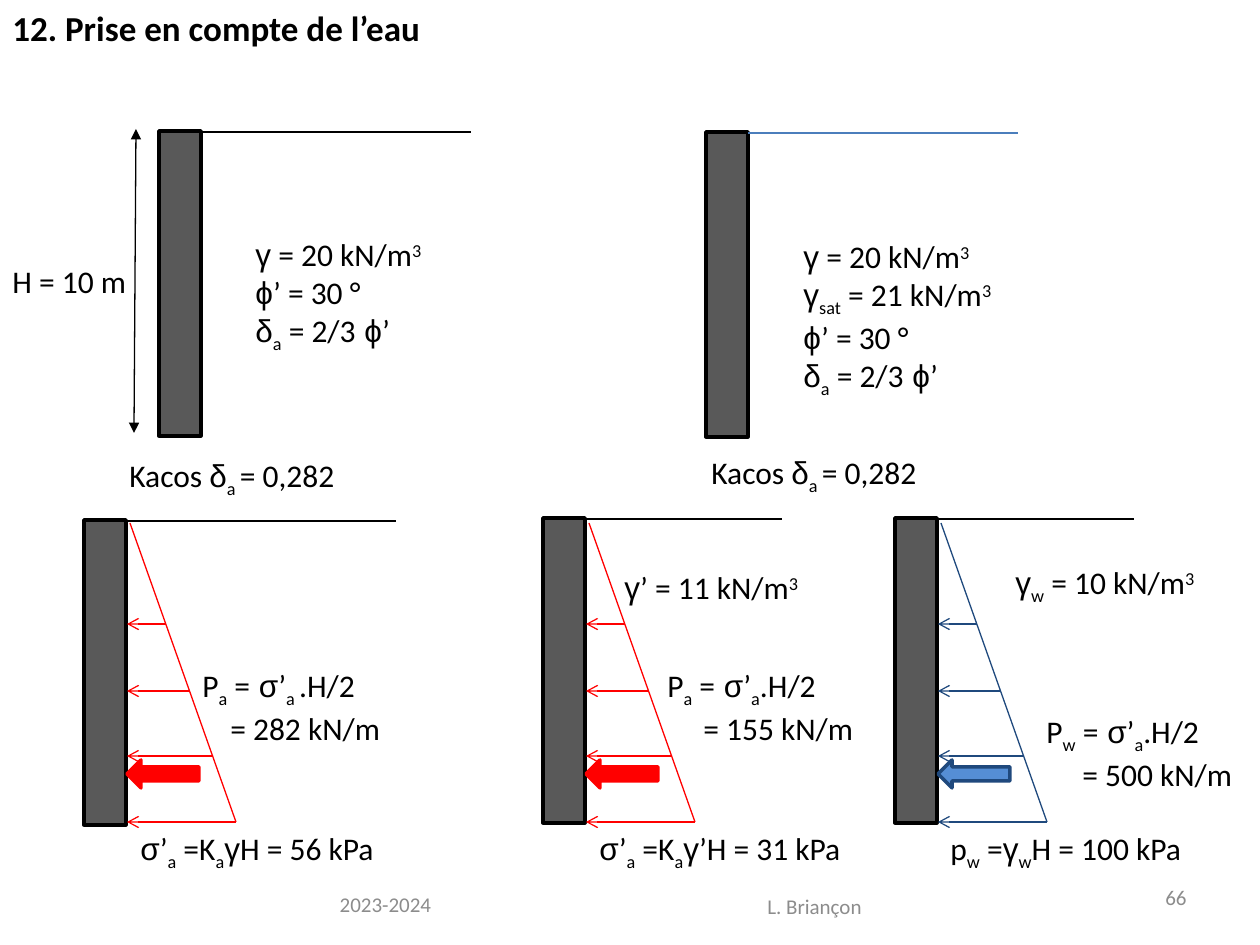
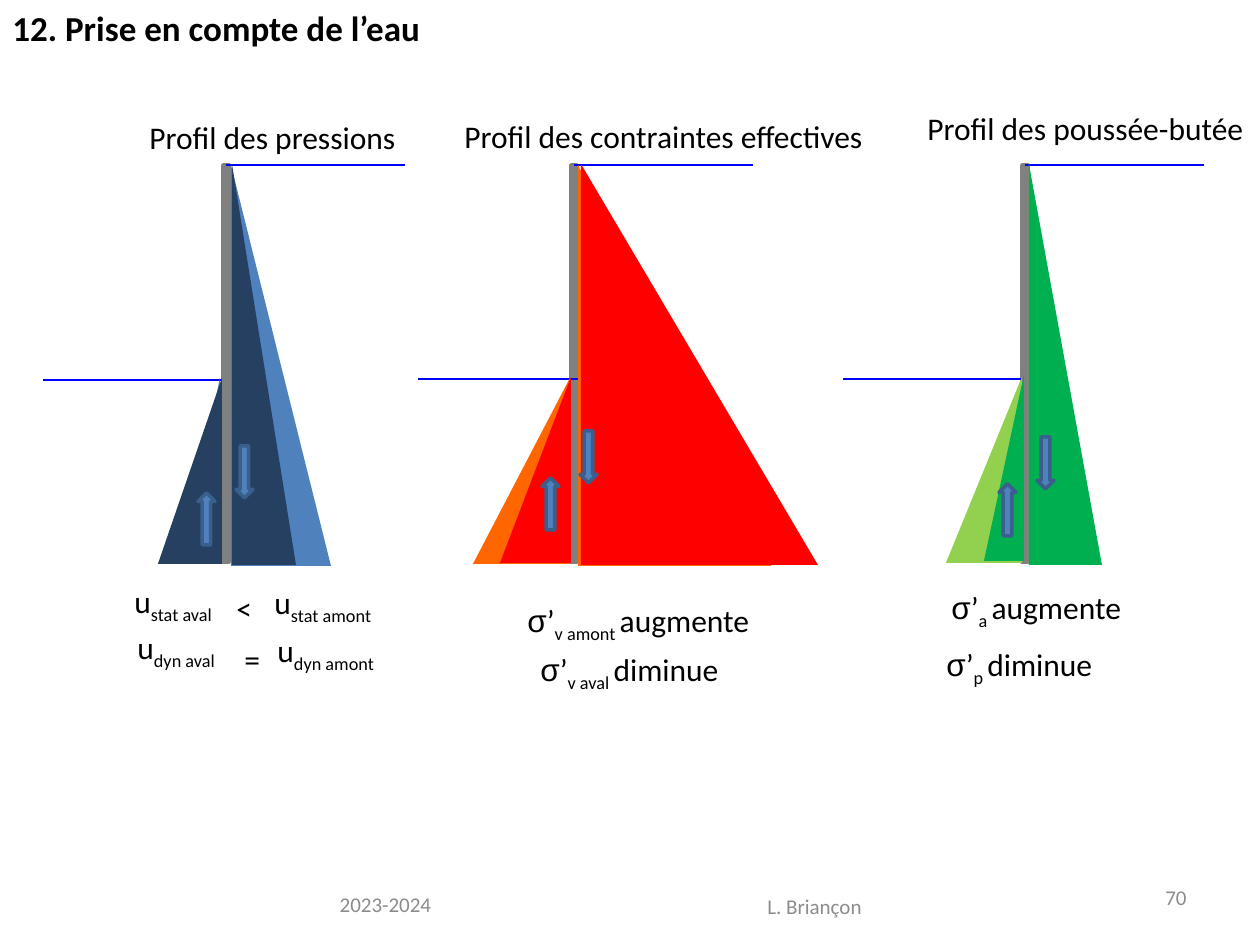
from lxml import etree
from pptx import Presentation
from pptx import util as u
from pptx.dml.color import RGBColor
from pptx.enum import shapes, text
from pptx.oxml import ns

COLORS = {
    "text": "000000", "footer": "8C8C8C", "wall": "595959", "ground": "000000",
    "soil_ground": "4B7EBC", "earth": "FF0000", "water": "1F497D", "water_thrust": "558ED5",
    "pile": "808080", "level": "0000FF", "flow": "4F81BD", "flow_edge": "3A5F8C",
    "u_stat": "4F81BD", "u_dyn": "254061", "sigma_stat": "FF6600", "sigma_dyn": "FF0000",
    "push_stat": "92D050", "push_dyn": "00B050",
}
TITLE = "12. Prise en compte de l’eau"
FOOTERS = [("2023-2024", 128, 879, 515, "CENTER"), ("L. Briançon", 615, 881, 399, "CENTER")]
GREEK = "γϕδσ"

# "|" separates runs
WEIGHT = "γ| = 20 kN/m|^3"
FRICTION = ["ϕ|’ = 30 °", "δ|_a| = 2/3| ϕ|’"]
KACOS = "Kacos |δ|_a |= 0,282"

WALLS = [
    (159, 131, 270, "ground"),
    (706, 132, 270, "soil_ground"),
    (84, 520, 270, "ground"),
    (543, 518, 197, "ground"),
    (895, 518, 197, "ground"),
]
WALL_W, WALL_H = 42, 305
PRESSURES = [(84, "earth", "earth"), (543, "earth", "earth"), (895, "water", "water_thrust")]
SLOPE_TOP, SLOPE_FOOT = (46, 523), (152, 822)
ARROW_LEVELS = [624, 691, 756, 822]
ARROW_TIP = 43

WALL_TEXTS = [
    (243, 229, 198, [WEIGHT] + FRICTION, 0),
    (791, 231, 223, [WEIGHT, "γ|_sat| = 21 kN/m|^3"] + FRICTION, 0),
    (0, 256, 141, ["H = 10 m"], 0),
    (117, 450, 233, [KACOS], 0),
    (699, 447, 233, [KACOS], 0),
    (128, 823, 290, ["σ|’|_a| =K|_a|γ|H = 56 kPa"], 0),
    (587, 823, 290, ["σ|’|_a| =K|_a|γ|’H = 31 kPa"], 0),
    (938, 823, 290, ["p|_w| =|γ|_w|H = 100 kPa"], 0),
    (190, 660, 213, ["P|_a| =| σ|’|_a |.H/2", "= 282 kN/m"], 28),
    (655, 660, 221, ["P|_a| =| σ|’|_a|.H/2", "= 155 kN/m"], 36),
    (1034, 706, 221, ["P|_w| =| σ|’|_a|.H/2", "= 500 kN/m"], 36),
    (612, 562, 200, ["γ|’ = 11 kN/m|^3"], 0),
    (1003, 557, 207, ["γ|_w| = 10 kN/m|^3"], 0),
]

PROFILES = [
    {"pile": 223, "aval_level": (43, 380), "flow": (236, 446), "kind": "u",
     "stat": [(231, 165, 100), (181, 378, 39)], "dyn": [(232, 164, 64), (158, 378, 64)]},
    {"pile": 571, "aval_level": (418, 379), "flow": (580, 431), "kind": "sigma",
     "stat": [(578, 165, 193), (473, 378, 97)], "dyn": [(581, 164, 237), (500, 377, 71)]},
    {"pile": 1022, "aval_level": (843, 379), "flow": (1037, 437), "kind": "push",
     "stat": [(1029, 164, 40), (946, 377, 76)], "dyn": [(1029, 164, 73), (984, 375, 40)]},
]
PILE_TOP, LEVEL_LENGTH = 165, 179
AMONT_H, AVAL_H = 401, 186
PROFILE_TEXTS = [
    (137, 112, 275, ["Profil des pressions"], 0),
    (452, 111, 428, ["Profil des contraintes effectives"], 0),
    (915, 103, 345, ["Profil des poussée-butée"], 0),
    (122, 576, 113, ["u|_stat aval"], 0),
    (262, 577, 135, ["u|_stat amont"], 0),
    (224, 583, 42, ["<"], 0),
    (125, 622, 112, ["u|_dyn aval"], 0),
    (265, 625, 135, ["u|_dyn amont"], 0),
    (232, 634, 40, ["="], 0),
    (515, 595, 258, ["σ|’|_v amont |augmente"], 0),
    (528, 644, 212, ["σ|’|_v aval |diminue"], 0),
    (939, 582, 197, ["σ|’|_a |augmente"], 0),
    (934, 639, 174, ["σ|’|_p |diminue"], 0),
]


def px(n):
    return u.Emu(round(n * 914400 / 126))


def rgb(name):
    return RGBColor.from_string(COLORS[name])


def add_runs(paragraph, marked, size, color, bold):
    for part in marked.split("|"):
        run = paragraph.add_run()
        shift = {"^": "30000", "_": "-25000"}.get(part[0])
        run.text = part[1:] if shift else part
        run.font.size = u.Pt(size)
        run.font.bold = bold
        run.font.name = "Arial" if any(letter in GREEK for letter in part) else "Calibri"
        run.font.color.rgb = rgb(color)
        if shift:
            run.font._element.set("baseline", shift)


def add_text(slide, x, y, w, lines, indent=0, size=18, color="text", bold=False, align="LEFT", fit=True):
    box = slide.shapes.add_textbox(px(x), px(y), px(w), px(50 + 38 * (len(lines) - 1)))
    frame = box.text_frame
    frame.word_wrap = not fit
    frame.auto_size = text.MSO_AUTO_SIZE.SHAPE_TO_FIT_TEXT if fit else text.MSO_AUTO_SIZE.NONE
    frame.vertical_anchor = text.MSO_ANCHOR.TOP if fit else text.MSO_ANCHOR.MIDDLE
    for i, line in enumerate(lines):
        paragraph = frame.add_paragraph() if i else frame.paragraphs[0]
        if i and indent:
            paragraph._p.get_or_add_pPr().set("marL", str(px(indent)))
        paragraph.alignment = getattr(text.PP_ALIGN, align)
        add_runs(paragraph, line, size, color, bold)


def add_block(slide, preset, x, y, w, h, fill, edge=None, mirrored=False):
    block = slide.shapes.add_shape(getattr(shapes.MSO_SHAPE, preset), px(x), px(y), px(w), px(h))
    block.shadow.inherit = False
    block.fill.solid()
    block.fill.fore_color.rgb = rgb(fill)
    if edge:
        block.line.color.rgb = rgb(edge)
        block.line.width = u.Pt(2)
    else:
        block.line.fill.background()
    if mirrored:
        block._element.spPr.xfrm.set("flipH", "1")


def add_line(slide, start, end, color, head=None, tail=None):
    line = slide.shapes.add_connector(
        shapes.MSO_CONNECTOR.STRAIGHT, *[px(n) for n in (*start, *end)])
    line.line.color.rgb = rgb(color)
    line.line.width = u.Pt(0.75)
    for tag, kind in (("a:headEnd", head), ("a:tailEnd", tail)):
        if kind:
            etree.SubElement(line.line._get_or_add_ln(), ns.qn(tag), type=kind)
    etree.SubElement(line._element.spPr, ns.qn("a:effectLst"))


def add_page(deck, number):
    slide = deck.slides.add_slide(deck.slide_layouts[6])
    add_text(slide, 0, 0, 437, [TITLE], size=20, bold=True)
    for words, x, y, w, align in FOOTERS + [(number, 905, 872, 294, "RIGHT")]:
        add_text(slide, x, y, w, [words], size=12, color="footer", align=align, fit=False)
    return slide


def add_pressure(slide, wall, color, thrust):
    (top_x, top_y), (foot_x, foot_y) = SLOPE_TOP, SLOPE_FOOT
    add_line(slide, (wall + top_x, top_y), (wall + foot_x, foot_y), color)
    for y in ARROW_LEVELS:
        reach = top_x + (foot_x - top_x) * (y - top_y) / (foot_y - top_y)
        add_line(slide, (wall + reach, y), (wall + ARROW_TIP, y), color, tail="arrow")
    add_block(slide, "LEFT_ARROW", wall + ARROW_TIP, 760, 72, 28, thrust, color)


def add_profile(slide, pile, aval_level, flow, kind, stat, dyn):
    add_block(slide, "RECTANGLE", pile, PILE_TOP, 6, 397, "pile", "pile")
    for x, y in ((pile + 3, PILE_TOP), aval_level):
        add_line(slide, (x, y), (x + LEVEL_LENGTH, y), "level")
    for state, (amont, aval) in (("stat", stat), ("dyn", dyn)):
        fill = f"{kind}_{state}"
        add_block(slide, "RIGHT_TRIANGLE", *amont, AMONT_H, fill)
        add_block(slide, "RIGHT_TRIANGLE", *aval, AVAL_H, fill, mirrored=True)
    x, y = flow
    add_block(slide, "DOWN_ARROW", x, y, 17, 52, "flow", "flow_edge")
    add_block(slide, "UP_ARROW", x - 38, y + 47, 17, 52, "flow", "flow_edge")


def main():
    deck = Presentation()
    deck.slide_width, deck.slide_height = px(1260), px(945)

    walls = add_page(deck, "66")
    for x, y, length, ground in WALLS:
        add_block(walls, "RECTANGLE", x, y, WALL_W, WALL_H, "wall", "ground")
        add_line(walls, (x + WALL_W, y + 1), (x + WALL_W + length, y + 1), ground)
    add_line(walls, (136, 129), (134, 433), "ground", head="triangle", tail="triangle")
    for pressure in PRESSURES:
        add_pressure(walls, *pressure)
    for words in WALL_TEXTS:
        add_text(walls, *words)

    profiles = add_page(deck, "70")
    for profile in PROFILES:
        add_profile(profiles, **profile)
    for words in PROFILE_TEXTS:
        add_text(profiles, *words)

    deck.save("out.pptx")


if __name__ == "__main__":
    main()
